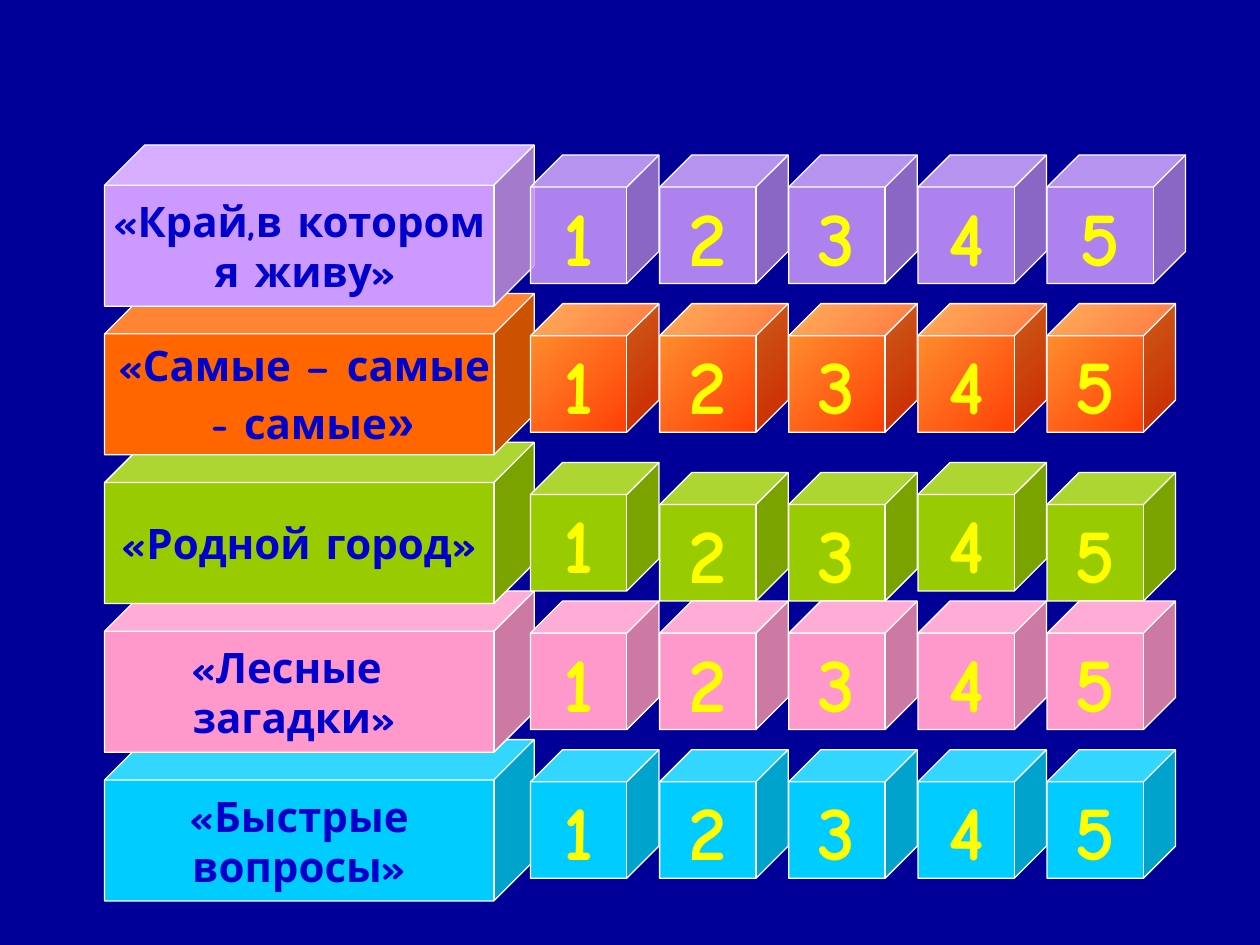
from lxml import etree
from pptx import Presentation
from pptx.dml.color import RGBColor
from pptx.enum.shapes import MSO_SHAPE
from pptx.enum.text import MSO_ANCHOR, PP_ALIGN
from pptx.oxml.ns import qn
from pptx.util import Inches, Pt

CUBE = MSO_SHAPE.CUBE
MIDDLE = MSO_ANCHOR.MIDDLE
CENTER = PP_ALIGN.CENTER

FONT = "Comic Neue"
NAVY, BLUE, YELLOW, WHITE = "000099", "0000CC", "FFFF00", "FFFFFF"
LEFT, TOP, PITCH = 0.83, 1.15, 1.18
GRID, STEP, SIDE = 4.21, 1.025, 1.02

# Each row: label fill, cube fill, label lines with their sideways shift
ROWS = [
    ("CC99FF", "CC99FF", [("«Край,в котором", 0), ("я живу»", 0.05)]),
    ("FF6600", ("FF9933", "FF3300"),
     [("«Самые – самые", 0.04), ("- самые", 0.11)]),
    ("99CC00", "99CC00", [("«Родной город»", 0)]),
    ("FF99CC", "FF99CC", [("«Лесные", -0.1), ("загадки»", 0.06)]),
    ("00CCFF", "00CCFF", [("«Быстрые", 0), ("вопросы»", 0)]),
]
CLEAR, LOW = 0, 2
TAILS = {1: "»"}
DROPS = [0, 0.16, 0.16, 0, 0.16]


def rgb(code):
    """Turn a hex string into a colour."""
    return RGBColor.from_string(code)


def style(run, size, color, name=FONT):
    """Format one bold run."""
    font = run.font
    font.name, font.size, font.bold = name, Pt(size), True
    font.color.rgb = rgb(color)


def paint(fill, color):
    """Fill with one colour, or with a diagonal blend of two."""
    if isinstance(color, str):
        fill.solid()
        fill.fore_color.rgb = rgb(color)
        return
    fill.gradient()
    fill.gradient_angle = 315
    for stop, code in zip(fill.gradient_stops, color):
        stop.color.rgb = rgb(code)


def fade(shape, percent):
    """Set the opacity of a solid fill."""
    color = shape.fill._xPr.find(qn("a:solidFill"))[0]
    etree.SubElement(color, qn("a:alpha")).set("val", str(percent * 1000))


def add_cube(slide, box, color):
    """Add a white-edged cube in the box."""
    cube = slide.shapes.add_shape(CUBE, *map(Inches, box))
    cube.shadow.inherit = False
    cube.adjustments[0] = 0.25
    paint(cube.fill, color)
    cube.line.color.rgb = rgb(WHITE)
    cube.line.width = Pt(0.75)
    cube.text_frame.vertical_anchor = MIDDLE
    return cube


def add_label(slide, box, color, lines, tail):
    """Add a topic block with its centred lines."""
    frame = add_cube(slide, box, color).text_frame
    frame.word_wrap = True
    frame.margin_left = frame.margin_right = 0
    frame.text = "\n".join(text for text, _ in lines)
    for para, (_, shift) in zip(frame.paragraphs, lines):
        para.alignment = CENTER
        side = "marL" if shift >= 0 else "marR"
        para._p.get_or_add_pPr().set(side, str(Inches(2 * abs(shift))))
        style(para.runs[0], 24, BLUE)
    if tail:
        run = frame.paragraphs[-1].add_run()
        run.text = tail
        style(run, 28, BLUE, "Arial")


def add_digit(slide, box, color, digit):
    """Add a numbered cube."""
    cube = add_cube(slide, box, color)
    frame = cube.text_frame
    frame.word_wrap = False
    frame.text = str(digit)
    para = frame.paragraphs[0]
    para.alignment = CENTER
    style(para.runs[0], 44, YELLOW)
    return cube


def add_row(slide, row, top, color):
    """Add the five numbered cubes of one row."""
    for col in range(5):
        drop = 0.08
        if row == LOW:
            drop = 0.16 if not DROPS[col] else 0.24
            drop = 0.24 if col in (1, 2, 4) else 0.16
        wide = 1.1 if row == CLEAR and col == 4 else SIDE
        box = (GRID + col * STEP, top + drop, wide, SIDE)
        cube = add_digit(slide, box, color, col + 1)
        if row == CLEAR:
            fade(cube, 85)


def main():
    """Build the quiz board and save it."""
    deck = Presentation()
    deck.slide_width, deck.slide_height = Inches(10), Inches(7.5)
    slide = deck.slides.add_slide(deck.slide_layouts[6])
    paint(slide.background.fill, NAVY)
    tops = [TOP + row * PITCH for row in range(len(ROWS))]
    for row in reversed(range(len(ROWS))):
        color, _, lines = ROWS[row]
        box = (LEFT, tops[row], 3.41, 1.28)
        add_label(slide, box, color, lines, TAILS.get(row))
    for row, (_, color, _) in enumerate(ROWS):
        add_row(slide, row, tops[row], color)
    deck.save("out.pptx")


if __name__ == "__main__":
    main()
